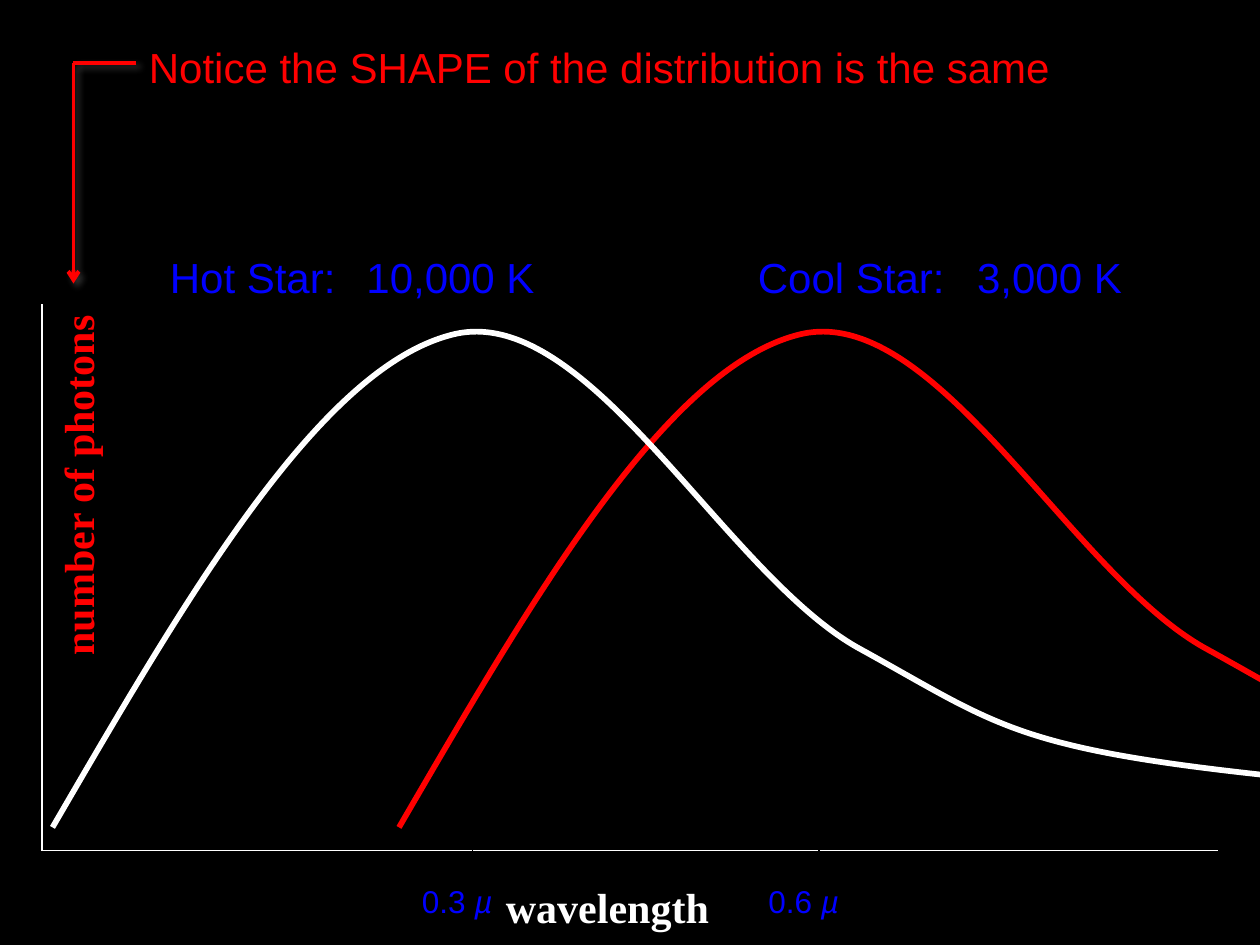
from lxml.etree import SubElement
from pptx import Presentation
from pptx.dml.color import RGBColor
from pptx.enum.shapes import MSO_CONNECTOR
from pptx.enum.text import MSO_AUTO_SIZE
from pptx.oxml.ns import qn
from pptx.util import Inches, Pt

COLUMNS, ROWS = 120, 90
COLORS = {"background": "000000", "axis": "FFFFFF", "hot": "FFFFFF",
          "cool": "FF0000", "accent": "FF0000", "label": "0000FF",
          "shadow": "808080"}
SANS, SERIF = "Arial", "Times New Roman"

# Bezier points of a spectrum: column offset from its start, then row
CURVE_START_ROW = 78.8
CURVE_POINTS = [
    (12.8, 56.8), (25.6, 34.7), (38.4, 31.8),
    (51.2, 29), (64.1, 54.8), (76.9, 61.8),
    (89.8, 68.9), (91.4, 71.2), (115.3, 73.8),
    (139.2, 76.6), (201.2, 77.2), (220.1, 77.9),
    (238.9, 78.5), (233.8, 78.1), (228.6, 77.9),
]


class StarSlide:
    """Draws on one slide, with lengths in grid columns and rows."""

    def __init__(self, presentation):
        self.slide = presentation.slides.add_slide(presentation.slide_layouts[6])
        self.column = presentation.slide_width / COLUMNS
        self.row = presentation.slide_height / ROWS
        fill = self.slide.background.fill
        fill.solid()
        fill.fore_color.rgb = self.color("background")

    def color(self, name):
        return RGBColor.from_string(COLORS[name])

    def place(self, x, y):
        return round(x * self.column), round(y * self.row)

    def text(self, box, runs, color, font=SANS, size=24, rotation=0, tab=None, **formats):
        """Add a one-line label; runs are (text, italic) pairs."""
        shape = self.slide.shapes.add_textbox(*self.place(*box[:2]), *self.place(*box[2:]))
        shape.rotation = rotation
        frame = shape.text_frame
        settings = {"word_wrap": True, "auto_size": MSO_AUTO_SIZE.SHAPE_TO_FIT_TEXT,
                    "margin_top": Inches(0.08)}
        for name, value in settings.items():
            setattr(frame, name, value)
        paragraph = frame.paragraphs[0]
        if tab:
            tabs = SubElement(paragraph._p.get_or_add_pPr(), qn("a:tabLst"))
            SubElement(tabs, qn("a:tab"), pos=str(Inches(tab)), algn="l")
        for words, italic in runs:
            run = paragraph.add_run()
            run.text = words
            values = {"name": font, "size": Pt(size), "italic": italic, **formats}
            for name, value in values.items():
                setattr(run.font, name, value)
            run.font.color.rgb = self.color(color)

    def line(self, start, end, color, width=0.75, arrow=False, shadow=False):
        connector = self.slide.shapes.add_connector(
            MSO_CONNECTOR.STRAIGHT, *self.place(*start), *self.place(*end))
        connector.line.color.rgb = self.color(color)
        connector.line.width = Pt(width)
        if arrow:
            SubElement(connector.line._get_or_add_ln(), qn("a:tailEnd"), type="arrow")
        effects = SubElement(connector._element.spPr, qn("a:effectLst"))
        if shadow:
            outer = SubElement(effects, qn("a:outerShdw"), blurRad=str(Pt(4)),
                               dist=str(Pt(3)), dir=str(45 * 60000))
            tint = SubElement(outer, qn("a:srgbClr"), val=COLORS["shadow"])
            SubElement(tint, qn("a:alpha"), val="40000")

    def spectrum(self, start_column, color):
        points = [self.place(start_column + x, y) for x, y in CURVE_POINTS]
        builder = self.slide.shapes.build_freeform(
            *self.place(start_column, CURVE_START_ROW))
        builder.add_line_segments(points, close=False)
        shape = builder.convert_to_shape()
        shape.shadow.inherit = False
        shape.fill.background()
        shape.line.color.rgb = self.color(color)
        shape.line.width = Pt(3.25)
        self.bend(shape)

    def bend(self, shape):
        """Turn each three line segments into one cubic Bezier segment."""
        outline = next(shape._element.iter(qn("a:path")))
        segments = outline.findall(qn("a:lnTo"))
        for first in range(0, len(segments), 3):
            curve = SubElement(outline, qn("a:cubicBezTo"))
            for segment in segments[first:first + 3]:
                curve.append(segment[0])
                outline.remove(segment)


def main():
    presentation = Presentation()
    presentation.slide_width, presentation.slide_height = Inches(10), Inches(7.5)
    page = StarSlide(presentation)

    page.text((71, 23, 45, 6.1), [("Cool Star:\t3,000 K", False)], "label", tab=1.74)
    page.line((4, 29), (4, 81), "axis")
    page.line((4, 81), (116, 81), "axis")
    page.text((-10.8, 42.8, 35.6, 6), [("number of photons", False)], "accent",
              font=SERIF, rotation=270, bold=True)
    page.spectrum(38, "cool")
    page.text((47, 83, 49.3, 6.1), [("wavelength", False)], "axis", font=SERIF, bold=True)
    page.spectrum(5, "hot")
    page.text((15, 23, 44, 6.1), [("Hot Star:\t10,000 K", False)], "label", tab=1.56)

    for column, value in ((45, "0.3 "), (78, "0.6 ")):
        page.line((column, 79), (column, 83), "background")
        page.text((column - 6, 83, 12, 4.8), [(value, False), ("µ", True)], "label", size=18)

    page.text((13, 3, 95, 6.1),
              [("Notice the SHAPE of the distribution is the same", False)], "accent")
    page.line((13, 6), (7, 6), "accent", width=2.25, shadow=True)
    page.line((7, 6), (7, 27), "accent", width=2.25, arrow=True, shadow=True)

    presentation.save("out.pptx")


if __name__ == "__main__":
    main()
